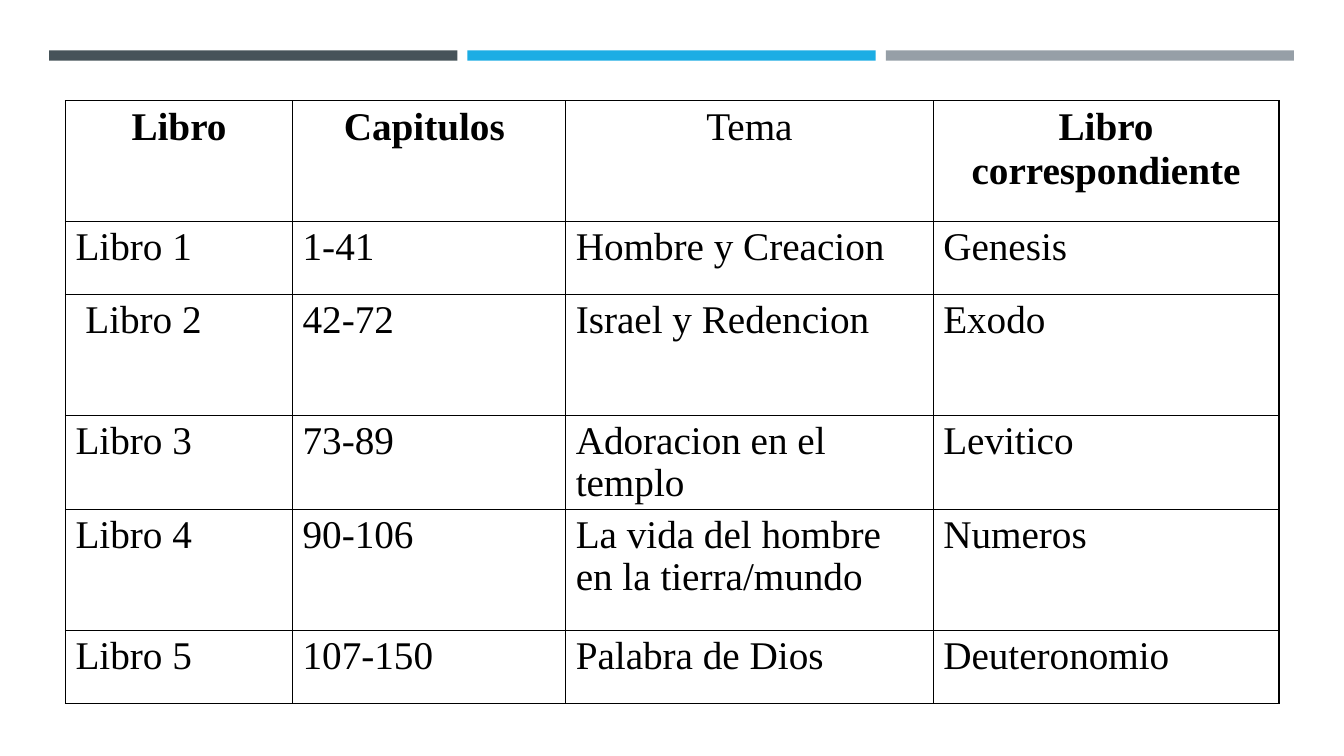
from dataclasses import dataclass

from lxml import etree
from pptx import Presentation
from pptx import util as u
from pptx.dml import color
from pptx.enum import shapes, text
from pptx.oxml import ns

COLORS = {
    "slate": "465359",
    "blue": "1CADE4",
    "gray": "969FA7",
    "ink": "000000",
}
FONT = "Times New Roman"
FONT_SIZE = 28
BAR_LEFT, BAR_TOP, BAR_WIDTH, BAR_HEIGHT = 35.1, 36, 291.6, 7.4
BAR_STEP = 298.8
TABLE_LEFT, TABLE_TOP = 46.8, 72
COL_WIDTHS = (162.2, 195.1, 262.5, 247)
TALL_ROW, SHORT_ROW = 86.4, 52


@dataclass(frozen=True)
class Bar:
    index: int
    fill: str


@dataclass(frozen=True)
class Row:
    height: float
    cells: tuple[str, ...]
    align: text.PP_ALIGN = text.PP_ALIGN.LEFT
    spacing: float = 0.97
    bold_columns: tuple[int, ...] = ()


BARS = (Bar(0, "slate"), Bar(1, "blue"), Bar(2, "gray"))

ROWS = (
    Row(TALL_ROW, ("Libro", "Capitulos ", "Tema", "Libro correspondiente"),
        text.PP_ALIGN.CENTER, 1.0, (0, 1, 3)),
    Row(SHORT_ROW, ("Libro 1 ", "1-41 ", "Hombre y Creacion", "Genesis ")),
    Row(TALL_ROW, (" Libro 2 ", "42-72 ", "Israel y Redencion ", "Exodo")),
    Row(SHORT_ROW, ("Libro 3 ", "73-89 ", "Adoracion en el templo", "Levitico")),
    Row(TALL_ROW, ("Libro 4 ", "90-106 ",
                   "La vida del hombre en la tierra/mundo", "Numeros")),
    Row(SHORT_ROW, ("Libro 5 ", "107-150 ", "Palabra de Dios", "Deuteronomio")),
)


def rgb(name: str) -> color.RGBColor:
    return color.RGBColor.from_string(COLORS[name])


def draw_bar(s, bar: Bar) -> None:
    sp = s.shapes.add_shape(
        shapes.MSO_SHAPE.RECTANGLE,
        u.Pt(BAR_LEFT + bar.index * BAR_STEP), u.Pt(BAR_TOP),
        u.Pt(BAR_WIDTH), u.Pt(BAR_HEIGHT),
    )
    sp.shadow.inherit = False
    sp.fill.solid()
    sp.fill.fore_color.rgb = rgb(bar.fill)
    sp.line.fill.background()


def add_borders(cell) -> None:
    tc_pr = cell._tc.get_or_add_tcPr()
    for i, side in enumerate(("a:lnL", "a:lnR", "a:lnT", "a:lnB")):
        ln = etree.Element(ns.qn(side), w=str(u.Pt(1)))
        fill = etree.SubElement(ln, ns.qn("a:solidFill"))
        etree.SubElement(fill, ns.qn("a:srgbClr"), val=COLORS["ink"])
        tc_pr.insert(i, ln)


def fill_cell(cell, content: str, row: Row, bold: bool) -> None:
    cell.fill.background()
    add_borders(cell)
    tf = cell.text_frame
    tf.text = content
    p = tf.paragraphs[0]
    p.alignment = row.align
    p.line_spacing = row.spacing
    r = p.runs[0]
    r.font.name = FONT
    r.font.size = u.Pt(FONT_SIZE)
    r.font.bold = bold
    r.font.color.rgb = rgb("ink")


def draw_table(s, rows: tuple[Row, ...]) -> None:
    tbl = s.shapes.add_table(
        len(rows), len(COL_WIDTHS), u.Pt(TABLE_LEFT), u.Pt(TABLE_TOP),
        u.Pt(sum(COL_WIDTHS)), u.Pt(sum(row.height for row in rows)),
    ).table
    tbl.first_row = False
    tbl.horz_banding = False
    for column, width in zip(tbl.columns, COL_WIDTHS):
        column.width = u.Pt(width)
    for i, row in enumerate(rows):
        tbl.rows[i].height = u.Pt(row.height)
        for j, content in enumerate(row.cells):
            fill_cell(tbl.cell(i, j), content, row, j in row.bold_columns)


def main() -> None:
    prs = Presentation()
    prs.slide_width, prs.slide_height = u.Pt(960), u.Pt(540)
    s = prs.slides.add_slide(prs.slide_layouts[6])
    for bar in BARS:
        draw_bar(s, bar)
    draw_table(s, ROWS)
    prs.save("out.pptx")


if __name__ == "__main__":
    main()
